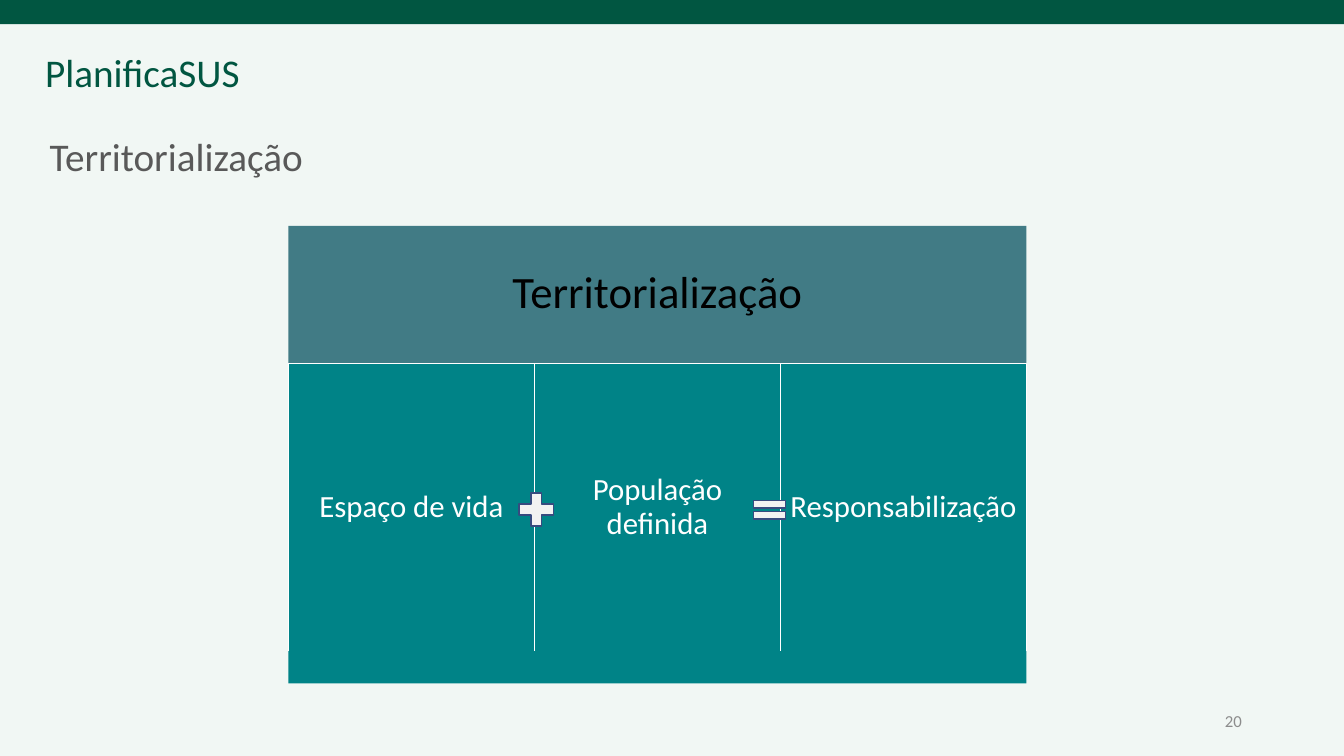
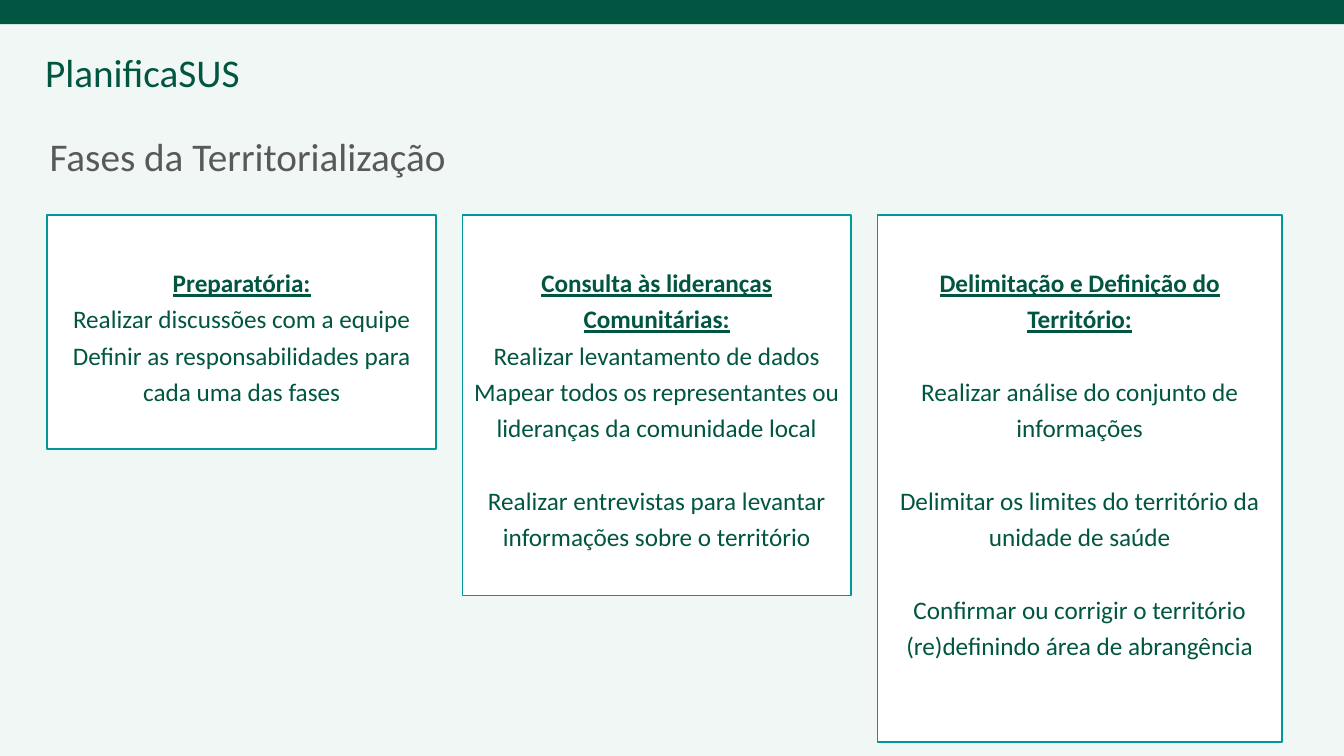
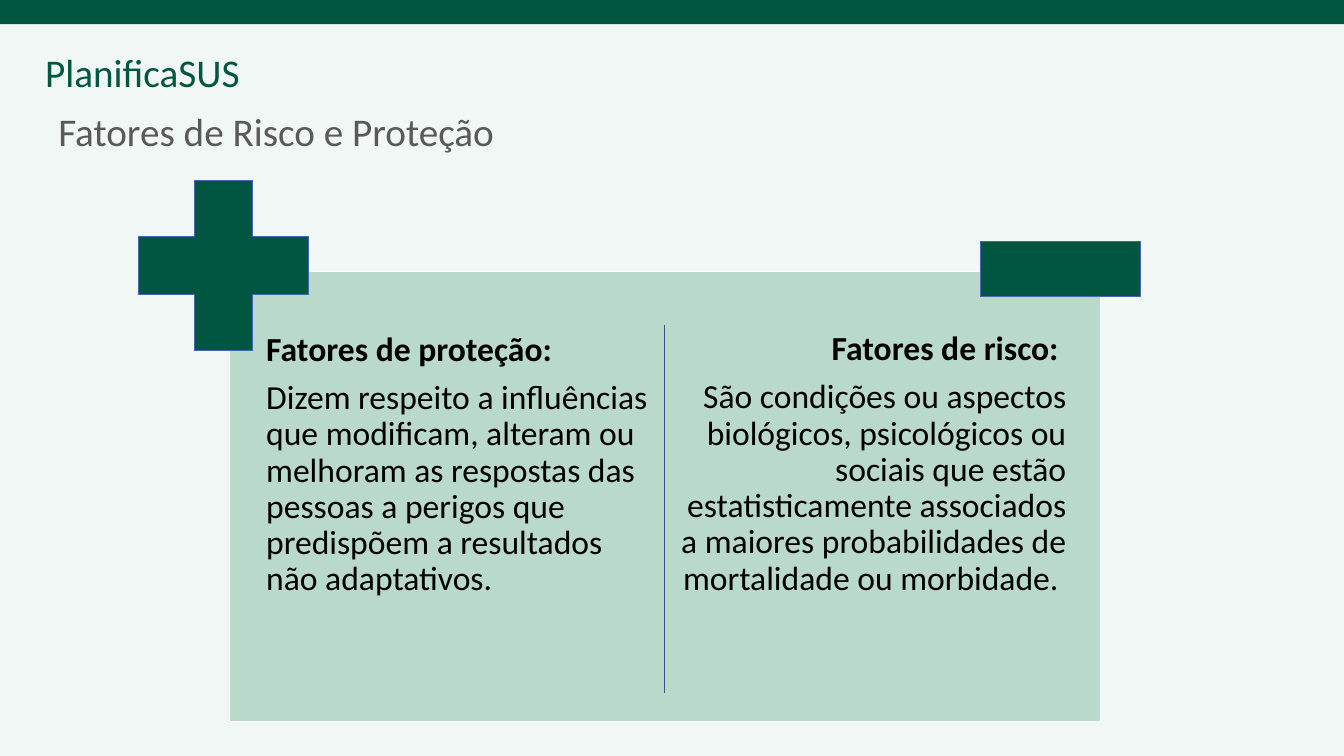
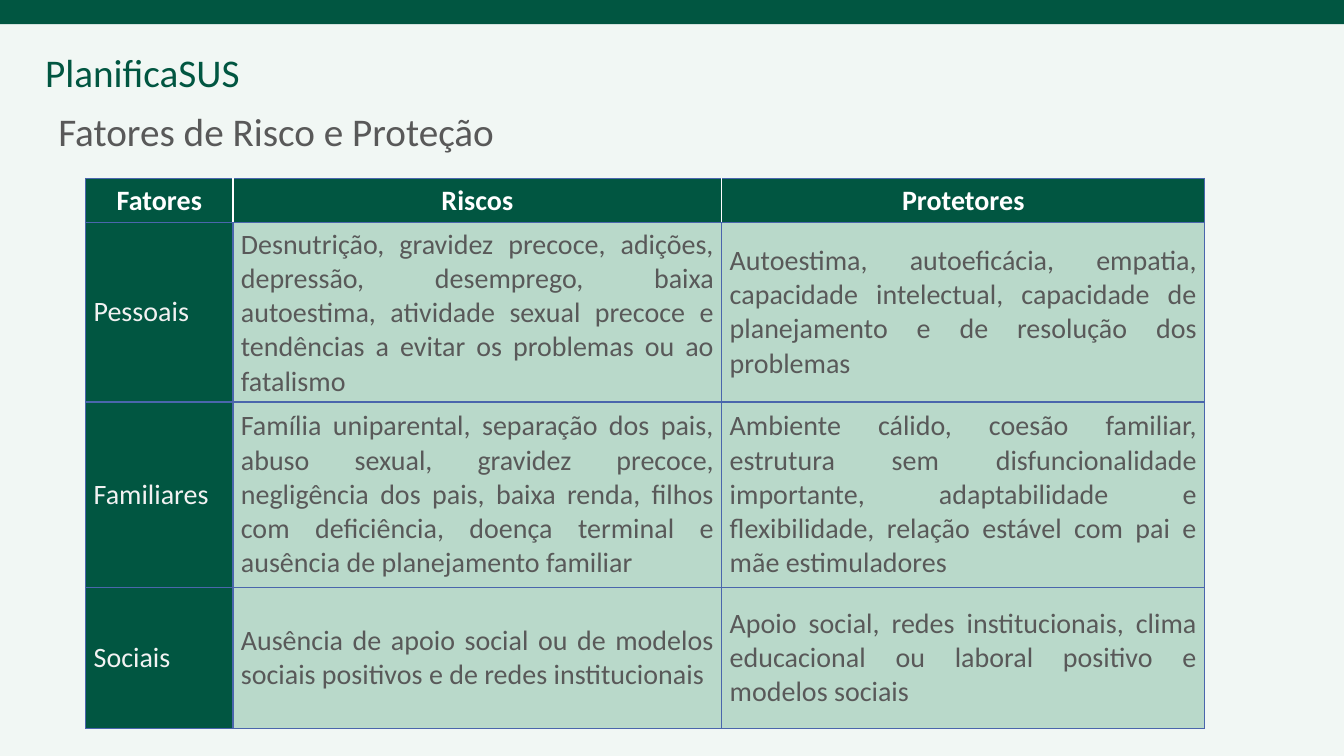
from itertools import accumulate

from lxml import etree
from pptx import Presentation
from pptx import util as u
from pptx.dml.color import RGBColor
from pptx.enum import shapes, text
from pptx.oxml.ns import qn

FONT = "Calibri"
DARK_GREEN = "015641"
LIGHT_GREEN = "B9D9CA"
PALE = "F1F7F4"
TEAL = "008387"
SLATE = "417B85"
BLUE = "4A66AC"
GRAY = "595959"
WHITE = "FFFFFF"
OFF_WHITE = "F2F2F2"
BLACK = "000000"

LEFT, CENTER = text.PP_ALIGN.LEFT, text.PP_ALIGN.CENTER
RIGHT, JUSTIFY = text.PP_ALIGN.RIGHT, text.PP_ALIGN.JUSTIFY
TOP, MIDDLE = text.MSO_ANCHOR.TOP, text.MSO_ANCHOR.MIDDLE
RECTANGLE = shapes.MSO_SHAPE.RECTANGLE


def rgb(color):
    return RGBColor.from_string(color)


class Builder:
    """Holds the deck style and the page being filled; places are in centimetres."""

    def __init__(self):
        self.deck = Presentation()
        self.deck.slide_width, self.deck.slide_height = u.Cm(33.87), u.Cm(19.05)
        self.paint(self.deck.slide_master.background, PALE)
        self.page = None

    def paint(self, thing, color):
        thing.fill.solid()
        thing.fill.fore_color.rgb = rgb(color)

    def start_page(self, title, left, top):
        self.page = self.deck.slides.add_slide(self.deck.slide_layouts[6])
        self.shape((0, 0, 33.87, 0.61), DARK_GREEN)
        self.label((0.89, 1.09, 6, 1.45), "PlanificaSUS", 28, DARK_GREEN)
        self.label((left, top, 27.9, 1.93), title, 28, GRAY, spacing=0.9)

    def set_text(self, frame, content, size, color, align=LEFT, spacing=1.0, bold=False):
        frame.text = content
        for para in frame.paragraphs:
            para.alignment, para.line_spacing = align, spacing
            for span in para.runs:
                span.font.name, span.font.size = FONT, u.Pt(size)
                span.font.color.rgb, span.font.bold = rgb(color), bold

    def frame(self, box, margins=None, anchor=TOP):
        """Set up wrapping, anchor and (left, top, right, bottom) margins."""
        frame = box.text_frame
        frame.word_wrap, frame.vertical_anchor = True, anchor
        if margins:
            (frame.margin_left, frame.margin_top,
             frame.margin_right, frame.margin_bottom) = map(u.Cm, margins)
        return frame

    def label(self, place, content, size, color, margins=None, anchor=TOP, **style):
        box = self.page.shapes.add_textbox(*map(u.Cm, place))
        frame = self.frame(box, margins, anchor)
        self.set_text(frame, content, size, color, **style)
        return frame

    def shape(self, place, fill, line=None, width=1, kind=RECTANGLE):
        box = self.page.shapes.add_shape(kind, *map(u.Cm, place))
        box.shadow.inherit = False
        self.paint(box, fill)
        if line:
            box.line.color.rgb, box.line.width = rgb(line), u.Pt(width)
        else:
            box.line.fill.background()
        return box

    def block(self, place, fill, content, size, color, line=None):
        """Filled rectangle with centred text."""
        box = self.shape(place, fill, line)
        frame = self.frame(box, (0.2, 0.2, 0.2, 0.2), MIDDLE)
        self.set_text(frame, content, size, color, CENTER, 0.9)

    def phase(self, place, heading, steps):
        """Outlined card; each step is (text, space before in points)."""
        box = self.shape(place, WHITE, "009999")
        frame = self.frame(box, (0.3, 1.17, 0.3, 0.15))
        lines = [heading] + [step for step, _ in steps]
        self.set_text(frame, "\n".join(lines), 18, DARK_GREEN, CENTER, 1.2)
        first, *others = frame.paragraphs
        first.runs[0].font.bold = first.runs[0].font.underline = True
        for para, (_, gap) in zip(others, steps):
            para.space_before = u.Pt(gap)

    def factor(self, place, heading, body, align):
        frame = self.label(place, f"{heading}\n{body}", 24, BLACK,
                           (0.13, 0.13, 0.13, 0.13), align=align, spacing=0.9)
        first = frame.paragraphs[0]
        first.runs[0].font.bold, first.space_after = True, u.Pt(8.4)

    def line(self, start, end, color):
        line = self.page.shapes.add_connector(
            shapes.MSO_CONNECTOR.STRAIGHT, *map(u.Cm, start + end))
        line.line.color.rgb, line.line.width = rgb(color), u.Pt(1)
        etree.SubElement(line._element.spPr, qn("a:effectLst"))

    def borders(self, cell, sides):
        properties = cell._tc.get_or_add_tcPr()
        for index, side in enumerate(sides):
            edge = etree.Element(qn(f"a:ln{side}"), w=str(u.Pt(1)))
            fill = etree.SubElement(edge, qn("a:solidFill"))
            etree.SubElement(fill, qn("a:srgbClr"), val=BLUE)
            properties.insert(index, edge)

    def table(self, left, top, widths, heights, rows):
        place = map(u.Cm, (left, top, sum(widths), sum(heights)))
        table = self.page.shapes.add_table(len(rows), len(widths), *place).table
        table.horz_banding = False
        for column, width in zip(table.columns, widths):
            column.width = u.Cm(width)
        for row, height in zip(table.rows, heights):
            row.height = u.Cm(height)
        for i, row in enumerate(rows):
            for j, content in enumerate(row):
                cell = table.cell(i, j)
                cell.vertical_anchor = MIDDLE
                cell.margin_left = cell.margin_right = u.Cm(0.2)
                sides = "LRTB"
                if i == 0:
                    fill, color, align = DARK_GREEN, WHITE, CENTER
                    sides = ("LTB", "TB", "RTB")[j]
                elif j == 0:
                    fill, color, align = DARK_GREEN, OFF_WHITE, LEFT
                else:
                    fill, color, align = LIGHT_GREEN, GRAY, JUSTIFY
                self.set_text(cell.text_frame, content, 20, color, align, bold=i == 0)
                self.paint(cell, fill)
                self.borders(cell, sides)


def territory_page(builder):
    builder.start_page("Territorialização", 1, 3.35)
    builder.label((23.93, 17.65, 7.62, 1.02), "20", 12, "8C8C8C", anchor=MIDDLE, align=RIGHT)
    left, width = 7.27, 18.6
    builder.block((left, 5.69, width, 3.46), SLATE, "Territorialização", 32, BLACK)
    column = width / 3
    for i, content in enumerate(("Espaço de vida", "População definida", "Responsabilização")):
        builder.block((left + i * column, 9.16, column, 7.26), TEAL, content, 22, WHITE, WHITE)
    builder.shape((left, 16.41, width, 0.81), TEAL)
    builder.shape((12.93, 12.27, 1.17, 1.14), OFF_WHITE, "374B7F", kind=shapes.MSO_SHAPE.MATH_PLUS)
    builder.shape((18.85, 12.45, 1.09, 0.79), OFF_WHITE, "374B7F", kind=shapes.MSO_SHAPE.MATH_EQUAL)


def phases_page(builder):
    builder.start_page("Fases da Territorialização", 1, 3.35)
    blank = 26
    phases = (
        (9.8, 5.9, "Preparatória:", (
            ("Realizar discussões com a equipe", 0),
            ("Definir as responsabilidades para cada uma das fases", 0))),
        (9.8, 9.58, "Consulta às lideranças Comunitárias:", (
            ("Realizar levantamento de dados", 0),
            ("Mapear todos os representantes ou lideranças da comunidade local", 0),
            ("Realizar entrevistas para levantar informações sobre o território", blank))),
        (10.2, 13.28, "Delimitação e Definição do Território:", (
            ("Realizar análise do conjunto de informações", blank),
            ("Delimitar os limites do território da unidade de saúde", blank),
            ("Confirmar ou corrigir o território", blank),
            ("(re)definindo área de abrangência", 0))),
    )
    gap = 0.66
    lefts = accumulate((width + gap for width, *_ in phases), initial=1.19)
    for left, (width, height, heading, steps) in zip(lefts, phases):
        builder.phase((left, 5.42, width, height), heading, steps)


def factors_page(builder):
    builder.start_page("Fatores de Risco e Proteção", 1.22, 2.72)
    builder.shape((5.77, 6.83, 21.97, 11.35), LIGHT_GREEN, WHITE, 0.5)
    builder.factor((6.58, 8.25, 10.21, 7.77), "Fatores de proteção:",
                   "Dizem respeito a influências que modificam, alteram ou melhoram as respostas "
                   "das pessoas a perigos que predispõem a resultados não adaptativos.", LEFT)
    builder.factor((16.79, 8.23, 10.21, 7.77), "Fatores de risco: ",
                   "São condições ou aspectos biológicos, psicológicos ou sociais que estão "
                   "estatisticamente associados a maiores probabilidades de mortalidade "
                   "ou morbidade. ", RIGHT)
    plus = builder.shape((3.48, 4.55, 4.29, 4.29), DARK_GREEN, BLUE, 0.5, shapes.MSO_SHAPE.CROSS)
    plus.adjustments[0] = 0.33
    builder.shape((24.7, 6.08, 4.04, 1.4), DARK_GREEN, BLUE, 0.5)
    builder.line((16.74, 8.18), (16.74, 17.45), "3B528A")


def factor_table_page(builder):
    builder.start_page("Fatores de Risco e Proteção", 1.22, 2.72)
    rows = (
        ("Fatores", "Riscos", "Protetores"),
        ("Pessoais",
         "Desnutrição, gravidez precoce, adições, depressão, desemprego, baixa autoestima, "
         "atividade sexual precoce e tendências a evitar os problemas ou ao fatalismo",
         "Autoestima, autoeficácia, empatia, capacidade intelectual, capacidade de "
         "planejamento e de resolução dos problemas"),
        ("Familiares",
         "Família uniparental, separação dos pais, abuso sexual, gravidez precoce, "
         "negligência dos pais, baixa renda, filhos com deficiência, doença terminal e "
         "ausência de planejamento familiar",
         "Ambiente cálido, coesão familiar, estrutura sem disfuncionalidade importante, "
         "adaptabilidade e flexibilidade, relação estável com pai e mãe estimuladores"),
        ("Sociais",
         "Ausência de apoio social ou de modelos sociais positivos e de redes institucionais",
         "Apoio social, redes institucionais, clima educacional ou laboral positivo e "
         "modelos sociais"),
    )
    builder.table(2.16, 4.5, (3.71, 12.32, 12.17), (1.09, 4.53, 4.67, 3.56), rows)


def main():
    builder = Builder()
    for build in (territory_page, phases_page, factors_page, factor_table_page):
        build(builder)
    builder.deck.save("out.pptx")


if __name__ == "__main__":
    main()
